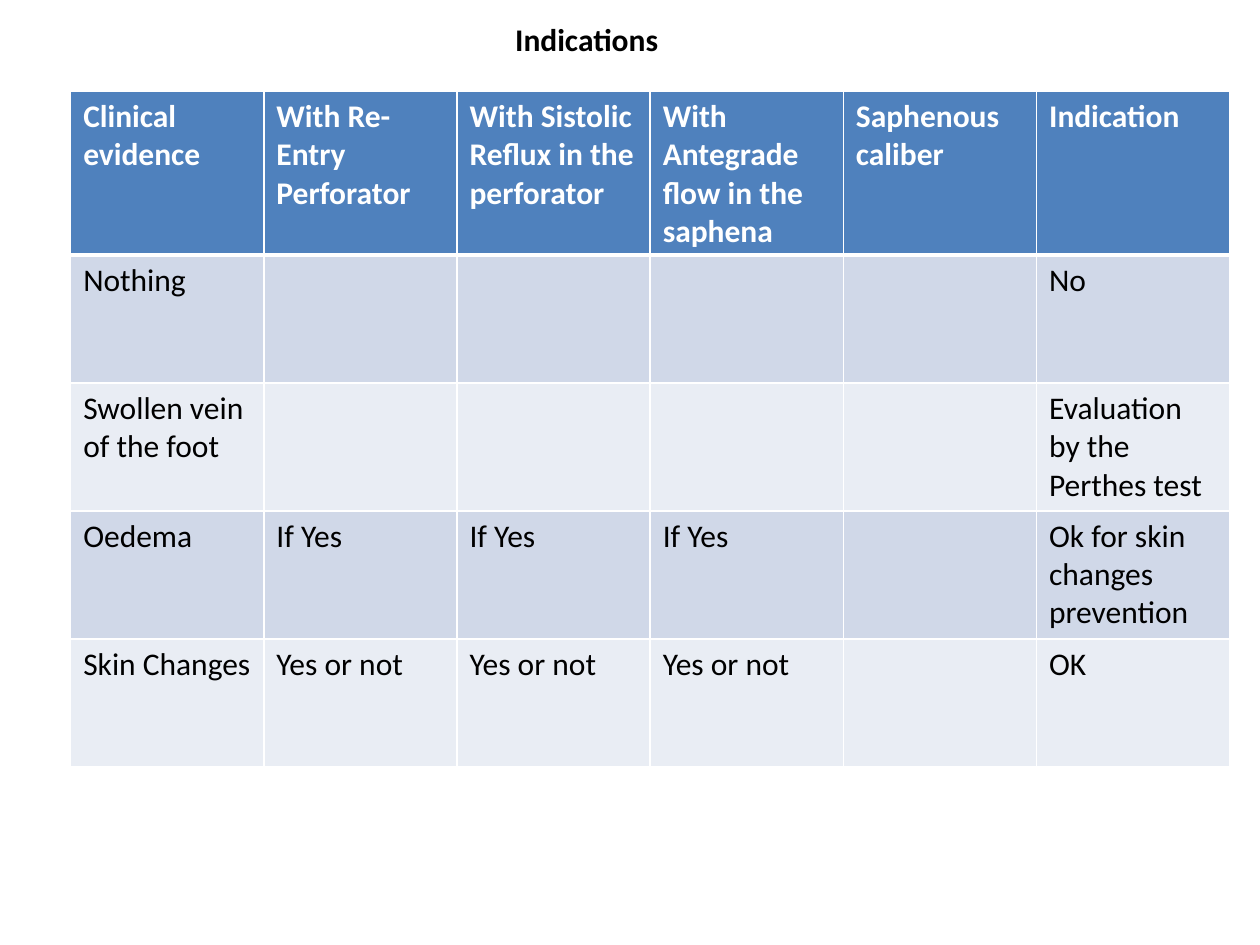
from lxml import etree
from pptx import Presentation
from pptx.dml.color import RGBColor
from pptx.enum import text
from pptx.oxml.ns import qn
from pptx.util import Pt

# Content
TITLE = "Indications"
HEADER = ["Clinical evidence", "With Re-Entry Perforator",
          "With Sistolic Reflux in the perforator",
          "With Antegrade flow in the saphena", "Saphenous caliber", "Indication"]
ROWS = [
    ["Nothing", "", "", "", "", "No"],
    ["Swollen vein of the foot", "", "", "", "", "Evaluation by the Perthes test"],
    ["Oedema", "If Yes", "If Yes", "If Yes", "", "Ok for skin changes prevention"],
    ["Skin Changes", "Yes or not", "Yes or not", "Yes or not", "", "OK"],
]

THEME = {
    "font": "Calibri", "size": 18,
    "text": "000000", "header_text": "FFFFFF",
    "header_fill": "4F81BD", "bands": ["D0D8E8", "E9EDF4"],
    "border": "FFFFFF", "thin": 1, "thick": 3,
}

# Layout in points
SLIDE_WIDTH, SLIDE_HEIGHT = 720, 540
TITLE_BOX = (287.3, 8, 97.2, 29)
TABLE_LEFT, TABLE_TOP, TABLE_WIDTH, ROW_HEIGHT = 40.4, 52, 662.4, 73.15


def add_run(paragraph, words, color, bold):
    run = paragraph.add_run()
    run.text = words
    run.font.name = THEME["font"]
    run.font.size = Pt(THEME["size"])
    run.font.bold = bold
    run.font.color.rgb = RGBColor.from_string(color)


def set_borders(cell, top, bottom):
    properties = cell._tc.get_or_add_tcPr()
    widths = {"lnL": THEME["thin"], "lnR": THEME["thin"], "lnT": top, "lnB": bottom}
    for position, (side, width) in enumerate(widths.items()):
        line = etree.Element(qn(f"a:{side}"), w=str(Pt(width)))
        fill = etree.SubElement(line, qn("a:solidFill"))
        etree.SubElement(fill, qn("a:srgbClr"), val=THEME["border"])
        properties.insert(position, line)


def add_title(slide):
    shape = slide.shapes.add_textbox(*map(Pt, TITLE_BOX))
    frame = shape.text_frame
    frame.word_wrap = False
    frame.auto_size = text.MSO_AUTO_SIZE.SHAPE_TO_FIT_TEXT
    add_run(frame.paragraphs[0], TITLE, THEME["text"], True)


def add_indications_table(slide):
    content = [HEADER] + ROWS
    table = slide.shapes.add_table(
        len(content), len(HEADER), Pt(TABLE_LEFT), Pt(TABLE_TOP),
        Pt(TABLE_WIDTH), Pt(ROW_HEIGHT * len(content))).table
    for column in table.columns:
        column.width = Pt(TABLE_WIDTH / len(HEADER))
    for index, words_in_row in enumerate(content):
        table.rows[index].height = Pt(ROW_HEIGHT)
        is_header = index == 0
        fill = THEME["header_fill"] if is_header else THEME["bands"][(index - 1) % 2]
        color = THEME["header_text"] if is_header else THEME["text"]
        # The rule under the header is shared by the first two rows
        top = THEME["thick"] if index == 1 else THEME["thin"]
        bottom = THEME["thick"] if is_header else THEME["thin"]
        for cell, words in zip(table.rows[index].cells, words_in_row):
            cell.fill.solid()
            cell.fill.fore_color.rgb = RGBColor.from_string(fill)
            set_borders(cell, top, bottom)
            if words:
                add_run(cell.text_frame.paragraphs[0], words, color, is_header)


def main():
    presentation = Presentation()
    presentation.slide_width = Pt(SLIDE_WIDTH)
    presentation.slide_height = Pt(SLIDE_HEIGHT)
    slide = presentation.slides.add_slide(presentation.slide_layouts[6])
    add_title(slide)
    add_indications_table(slide)
    presentation.save("out.pptx")


if __name__ == "__main__":
    main()
